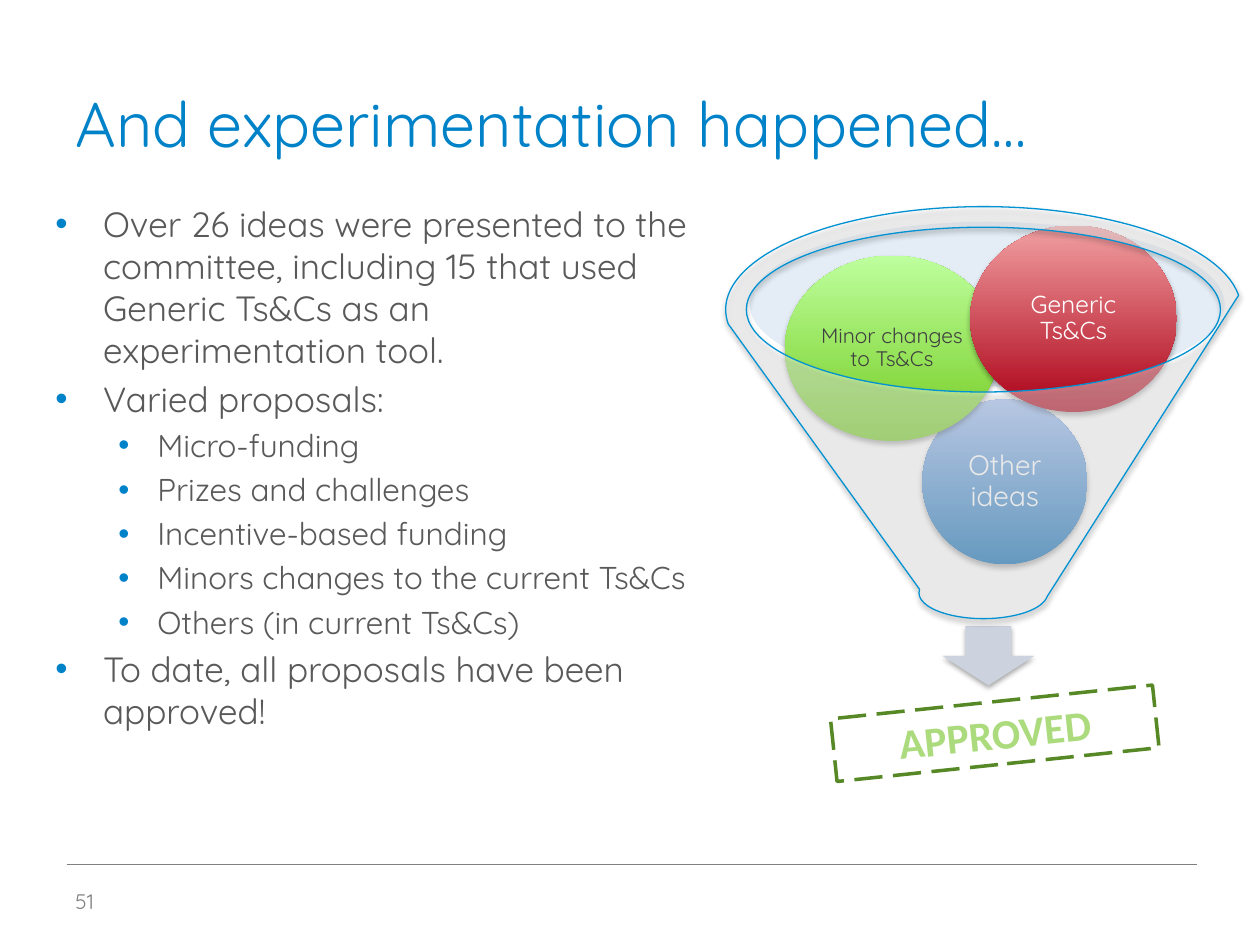
from lxml import etree
from pptx import Presentation
from pptx.dml.color import RGBColor
from pptx.enum import dml, shapes, text
from pptx.oxml import parse_xml
from pptx.oxml.ns import nsdecls, qn
from pptx.util import Inches, Pt

BLUE = RGBColor(0x00, 0x82, 0xC9)
FUNNEL_BLUE = RGBColor(0x00, 0x92, 0xD2)
MOUTH_BLUE = RGBColor(0xBD, 0xD2, 0xEA)
ARROW_GREY = RGBColor(0xCC, 0xD3, 0xDE)
WHITE = RGBColor(0xFF, 0xFF, 0xFF)
DARK_GREY = RGBColor(0x40, 0x40, 0x40)
TEXT_GREY = RGBColor(0x59, 0x59, 0x59)
MID_GREY = RGBColor(0x7F, 0x7F, 0x7F)
STAMP_GREEN = RGBColor(0x56, 0x89, 0x25)
STAMP_TEXT = RGBColor(0xAB, 0xDB, 0x7C)

FONT = "Quicksand"
BULLETS = [
    (0, "Over 26 ideas were presented to the committee, including 15 that used "
        "Generic Ts&Cs as an experimentation tool."),
    (0, "Varied proposals:"),
    (1, "Micro-funding"),
    (1, "Prizes and challenges"),
    (1, "Incentive-based funding"),
    (1, "Minors changes to the current Ts&Cs"),
    (1, "Others (in current Ts&Cs)"),
    (0, "To date, all proposals have been approved!"),
]
# level: (text indent, hanging indent, size)
LEVELS = {0: (0.38, 0.38, 20), 1: (0.81, 0.31, 18)}
# label, box, dark bottom, light top, text size, text colour
IDEAS = [
    ("Other ideas", (7.32, 3.17, 1.31, 1.31),
     RGBColor(0x02, 0x65, 0xAF), RGBColor(0x9F, 0xBD, 0xF2), 16, WHITE),
    ("Minor changes to Ts&Cs", (6.23, 2.03, 1.7, 1.47),
     RGBColor(0x73, 0xCA, 0x1E), RGBColor(0xBE, 0xFF, 0x9E), 12, DARK_GREY),
    ("Generic Ts&Cs", (7.7, 1.79, 1.64, 1.48),
     RGBColor(0xAC, 0x00, 0x16), RGBColor(0xF1, 0xA0, 0xA2), 14, WHITE),
]


def set_font(paragraph, size, color, name=FONT, bold=False):
    font = paragraph.font
    font.name, font.size, font.bold = name, Pt(size), bold
    font.color.rgb = color


def add_shape(slide, kind, box, fill=None, alpha=None):
    shape = slide.shapes.add_shape(kind, *map(Inches, box))
    shape.shadow.inherit = False
    shape.line.fill.background()
    if fill is not None:
        shape.fill.solid()
        shape.fill.fore_color.rgb = fill
    if alpha is not None:
        color = shape.fill._xPr.find(qn("a:solidFill"))[0]
        etree.SubElement(color, qn("a:alpha")).set("val", str(alpha * 1000))
    return shape


def add_soft_shadow(shape):
    effects = shape._element.spPr.find(qn("a:effectLst"))
    effects.append(parse_xml(
        f'<a:outerShdw {nsdecls("a")} blurRad="{Pt(3.1)}" dist="{Pt(1.8)}" '
        'dir="5400000" rotWithShape="0"><a:srgbClr val="000000">'
        '<a:alpha val="35000"/></a:srgbClr></a:outerShdw>'))


def add_title(slide):
    title = slide.shapes.title
    title.left, title.top, title.width, title.height = map(Inches, (0.5, 0.24, 9, 1.08))
    title.text_frame.text = "And experimentation happened…"
    title.text_frame.vertical_anchor = text.MSO_ANCHOR.BOTTOM
    paragraph = title.text_frame.paragraphs[0]
    paragraph.alignment = text.PP_ALIGN.LEFT
    set_font(paragraph, 36, BLUE)


def add_bullet(paragraph, level):
    indent, hanging, size = LEVELS[level]
    paragraph.level = level
    properties = paragraph._p.get_or_add_pPr()
    properties.set("marL", str(Inches(indent)))
    properties.set("indent", str(-Inches(hanging)))
    color = etree.SubElement(properties, qn("a:buClr"))
    etree.SubElement(color, qn("a:srgbClr")).set("val", str(BLUE))
    etree.SubElement(properties, qn("a:buFont")).set("typeface", "Arial")
    etree.SubElement(properties, qn("a:buChar")).set("char", "•")
    set_font(paragraph, size, TEXT_GREY)


def add_body(slide):
    body = slide.shapes.add_textbox(*map(Inches, (0.34, 1.56, 5.31, 5.58)))
    frame = body.text_frame
    frame.word_wrap = True
    for index, (level, wording) in enumerate(BULLETS):
        paragraph = frame.add_paragraph() if index else frame.paragraphs[0]
        paragraph.text = wording
        if index:
            paragraph.space_before = Pt(LEVELS[level][2] * 0.2)
        add_bullet(paragraph, level)


def add_footer(slide):
    rule = slide.shapes.add_connector(
        shapes.MSO_CONNECTOR.STRAIGHT, *map(Inches, (0.53, 6.86, 9.5, 6.86)))
    rule.line.color.rgb = MID_GREY
    rule.line.width = Pt(0.25)
    etree.SubElement(rule._element.spPr, qn("a:effectLst"))
    number = slide.shapes.add_textbox(*map(Inches, (0.5, 6.95, 1.07, 0.4)))
    number.text_frame.word_wrap = True
    number.text_frame.vertical_anchor = text.MSO_ANCHOR.MIDDLE
    number.text_frame.text = "51"
    set_font(number.text_frame.paragraphs[0], 12, MID_GREY)


def add_idea(slide, label, box, bottom, top, size, color):
    ball = add_shape(slide, shapes.MSO_SHAPE.OVAL, box)
    ball.fill.gradient()
    ball.fill.gradient_angle = 90
    for stop, stop_color in zip(ball.fill.gradient_stops, (bottom, top)):
        stop.color.rgb = stop_color
    add_soft_shadow(ball)
    frame = ball.text_frame
    frame.word_wrap = True
    frame.vertical_anchor = text.MSO_ANCHOR.MIDDLE
    frame.margin_left = frame.margin_right = Inches(0.02)
    frame.margin_top = frame.margin_bottom = Inches(0.02)
    frame.text = label
    paragraph = frame.paragraphs[0]
    paragraph.alignment = text.PP_ALIGN.CENTER
    paragraph.line_spacing = 0.9
    set_font(paragraph, size, color)


def add_funnel(slide):
    add_shape(slide, shapes.MSO_SHAPE.OVAL, (5.95, 1.76, 3.77, 1.31), MOUTH_BLUE, 40)
    arrow = add_shape(slide, shapes.MSO_SHAPE.DOWN_ARROW, (7.48, 4.97, 0.73, 0.47), ARROW_GREY)
    add_soft_shadow(arrow)
    for idea in IDEAS:
        add_idea(slide, *idea)
    funnel = add_shape(slide, shapes.MSO_SHAPE.FUNNEL, (5.76, 1.64, 4.09, 3.27), WHITE, 40)
    funnel.line.color.rgb = FUNNEL_BLUE
    funnel.line.width = Pt(0.75)
    add_soft_shadow(funnel)


def add_stamp(slide):
    stamp = add_shape(slide, shapes.MSO_SHAPE.RECTANGLE, (6.61, 5.57, 2.57, 0.5), WHITE)
    stamp.rotation = 354
    stamp.line.color.rgb = STAMP_GREEN
    stamp.line.width = Pt(2)
    stamp.line.dash_style = dml.MSO_LINE.LONG_DASH
    frame = stamp.text_frame
    frame.word_wrap = True
    frame.vertical_anchor = text.MSO_ANCHOR.TOP
    frame.text = "APPROVED"
    paragraph = frame.paragraphs[0]
    paragraph.alignment = text.PP_ALIGN.CENTER
    set_font(paragraph, 24, STAMP_TEXT, "Calibri", True)
    paragraph.runs[0]._r.get_or_add_rPr().insert(0, parse_xml(
        f'<a:ln {nsdecls("a")} w="{Pt(1)}"><a:solidFill>'
        f'<a:srgbClr val="{STAMP_GREEN}"/></a:solidFill></a:ln>'))


def main():
    presentation = Presentation()
    presentation.slide_width, presentation.slide_height = Inches(10), Inches(7.5)
    slide = presentation.slides.add_slide(presentation.slide_layouts[5])
    add_title(slide)
    add_body(slide)
    add_footer(slide)
    add_funnel(slide)
    add_stamp(slide)
    presentation.save("out.pptx")


if __name__ == "__main__":
    main()
